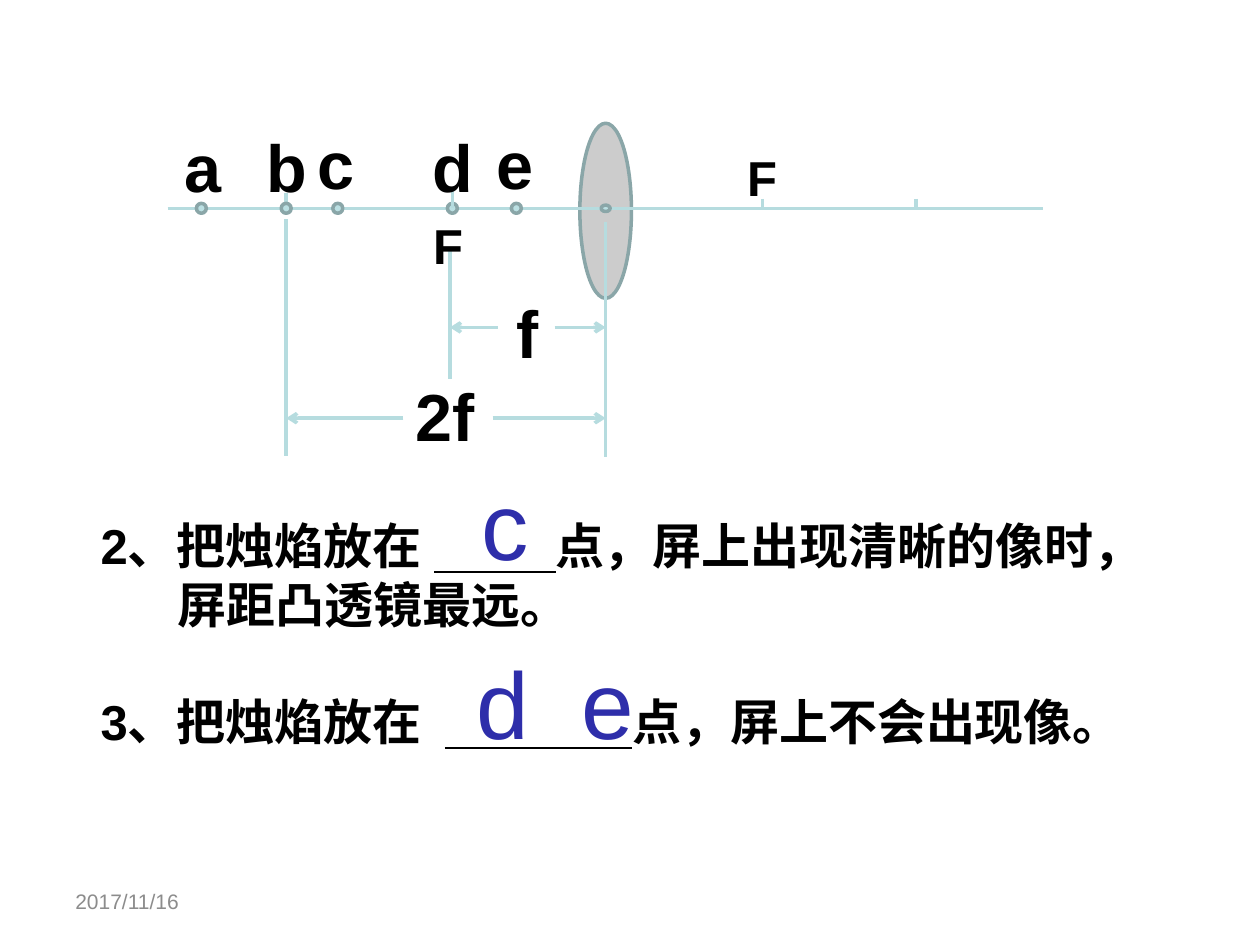
import itertools

import pptx
import pptx.dml.color
import pptx.enum.shapes
import pptx.enum.text
import pptx.oxml.ns
import pptx.util
from lxml import etree
from pptx.util import Cm, Pt

RGBColor = pptx.dml.color.RGBColor
BLACK = RGBColor(0x00, 0x00, 0x00)
DATE_GRAY = RGBColor(0x8C, 0x8C, 0x8C)
ANSWER_BLUE = RGBColor(0x2E, 0x2E, 0xAA)
RAY = RGBColor(0xB6, 0xDC, 0xDF)
OUTLINE = RGBColor(0x8A, 0xA6, 0xA8)
LENS_GRAY = RGBColor(0xCC, 0xCC, 0xCC)
POINT_FILL = RGBColor(0xBB, 0xE0, 0xE3)

qn = pptx.oxml.ns.qn
ALIGN = pptx.enum.text.PP_ALIGN
ANCHOR = pptx.enum.text.MSO_ANCHOR

deck = pptx.Presentation()
deck.slide_width, deck.slide_height = Cm(25.4), Cm(19.05)
slide = deck.slides.add_slide(deck.slide_layouts[6])


def write(text, left, top, width, height, size=38, color=BLACK, bold=True,
          align=ALIGN.LEFT, anchor=ANCHOR.TOP, tab_stops=()):
    """Add a text box, one paragraph per line, with an optional tab stop (cm) for each."""
    frame = slide.shapes.add_textbox(Cm(left), Cm(top), Cm(width), Cm(height)).text_frame
    frame.word_wrap = True
    frame.vertical_anchor = anchor
    for number, (line, stop) in enumerate(itertools.zip_longest(text.split("\n"), tab_stops)):
        paragraph = frame.add_paragraph() if number else frame.paragraphs[0]
        paragraph.alignment = align
        run = paragraph.add_run()
        run.text = line
        run.font.name = "Arial"
        run.font.size = Pt(size)
        run.font.bold = bold
        run.font.color.rgb = color
        if stop:
            stops = etree.SubElement(paragraph._p.get_or_add_pPr(), qn("a:tabLst"))
            etree.SubElement(stops, qn("a:tab"), pos=str(Cm(stop)), algn="l")
    return frame


def draw_line(x1, y1, x2, y2, color=RAY, weight=2, arrow=False):
    line = slide.shapes.add_connector(
        pptx.enum.shapes.MSO_CONNECTOR.STRAIGHT, Cm(x1), Cm(y1), Cm(x2), Cm(y2))
    line.line.color.rgb = color
    line.line.width = Pt(weight)
    if arrow:
        etree.SubElement(line.line._get_or_add_ln(), qn("a:tailEnd"), type="arrow")
    etree.SubElement(line._element.spPr, qn("a:effectLst"))


# Positions along the optical axis
AXIS_Y = 4.2
TWO_F, FOCUS, LENS = 5.77, 9.12, 12.21
FOCUS_GUIDE = 9.07
RIGHT_FOCUS, RIGHT_TWO_F = 15.37, 18.47

write("2017/11/16", 1.27, 17.65, 5.92, 1.02, size=12, color=DATE_GRAY,
      bold=False, anchor=ANCHOR.MIDDLE)

# Lens, candle points and optical centre, with the axis above the lens
ellipses = [(LENS, 4.25, 1.04, 3.53, LENS_GRAY)]
ellipses += [(x, AXIS_Y, 0.2, 0.2, POINT_FILL) for x in (4.06, TWO_F, 6.81, FOCUS, 10.41)]
ellipses += [(LENS, AXIS_Y, 0.18, 0.13, POINT_FILL)]
for x, y, width, height, fill in ellipses:
    ellipse = slide.shapes.add_shape(
        pptx.enum.shapes.MSO_SHAPE.OVAL,
        Cm(x - width / 2), Cm(y - height / 2), Cm(width), Cm(height))
    ellipse.shadow.inherit = False
    ellipse.fill.solid()
    ellipse.fill.fore_color.rgb = fill
    ellipse.line.color.rgb = OUTLINE
    ellipse.line.width = Pt(2)
    if fill == LENS_GRAY:
        draw_line(3.38, AXIS_Y, 21.03, AXIS_Y)
        draw_line(TWO_F, 3.89, TWO_F, AXIS_Y)

# Ticks on the axis
for x, top in ((FOCUS, 3.84), (RIGHT_FOCUS, 4.01), (RIGHT_TWO_F, 4.01)):
    draw_line(x, top, x, AXIS_Y)

# Guides and dimension arrows
for x, top, bottom in ((TWO_F, 4.42, 9.19), (FOCUS_GUIDE, 5.05, 7.65), (LENS, 4.47, 9.22)):
    draw_line(x, top, x, bottom)
for start, end, y in ((11.18, LENS, 6.6), (10.03, FOCUS_GUIDE, 6.6),
                      (9.93, LENS, 8.43), (8.13, TWO_F, 8.43)):
    draw_line(start, y, end, y, arrow=True)

# Labels
for letter, left, top in (("a", 3.48, 2.41), ("b", 5.13, 2.41), ("c", 6.15, 2.36),
                          ("d", 8.46, 2.41), ("e", 9.75, 2.36)):
    write(letter, left, top, 1.27, 1.88)
write("F", 14.81, 2.84, 1.04, 0.71, size=28)
write("F", 8.48, 4.22, 1.04, 1.45, size=28)
write("f", 10.16, 5.77, 1.02, 1.88)
write("2f", 8.13, 7.44, 1.78, 1.88)

# Questions, with a ruled blank for each answer
questions = write(
    "2、把烛焰放在\t点，屏上出现清晰的像时，\n屏距凸透镜最远。\n3、把烛焰放在\t点，屏上不会出现像。",
    1.78, 10.24, 22.15, 5.05, size=28, anchor=ANCHOR.MIDDLE, tab_stops=(9.16, None, 10.72))
questions.paragraphs[1]._p.get_or_add_pPr().set("marL", str(Cm(1.55)))
questions.paragraphs[2].space_before = Pt(33.5)
draw_line(8.75, 11.53, 11.2, 11.53, color=BLACK, weight=1.5)
draw_line(8.97, 15.08, 12.75, 15.08, color=BLACK, weight=1.5)

write("c", 9.4, 9.27, 1.57, 2.57, size=54, color=ANSWER_BLUE, bold=False, align=ALIGN.CENTER)
write("d\te", 9.35, 12.88, 3.84, 2.57, size=54, color=ANSWER_BLUE, bold=False, tab_stops=(2.12,))

deck.save("out.pptx")
